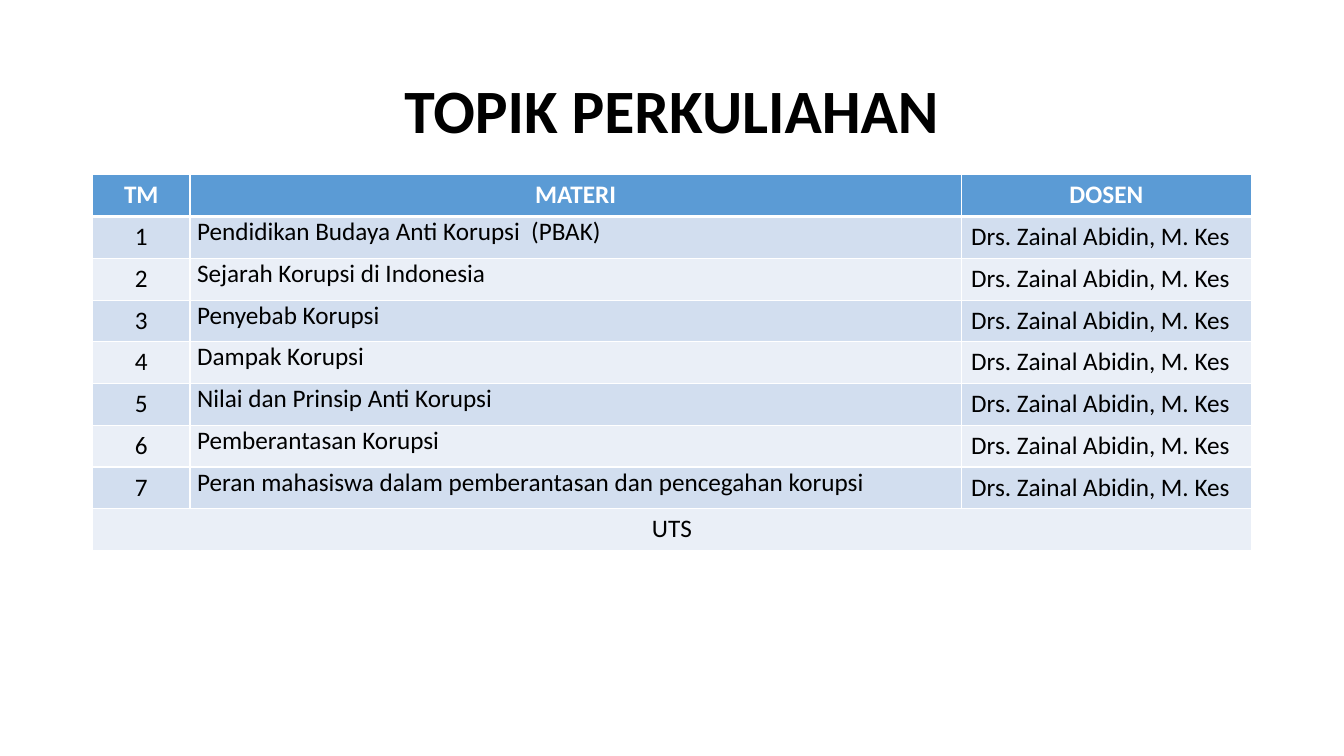
from lxml.etree import SubElement
from pptx import Presentation
from pptx.dml.color import RGBColor
from pptx.enum.text import MSO_ANCHOR, PP_ALIGN
from pptx.oxml.ns import qn
from pptx.util import Pt

WHITE = RGBColor(0xFF, 0xFF, 0xFF)
BLACK = RGBColor(0x00, 0x00, 0x00)
HEADER_BLUE = RGBColor(0x5B, 0x9B, 0xD5)
BAND_DARK = RGBColor(0xD2, 0xDE, 0xEF)
BAND_LIGHT = RGBColor(0xEA, 0xEF, 0xF7)

LEFT, WIDTH = Pt(66), Pt(828)
LECTURER = "Drs. Zainal Abidin, M. Kes"
TOPICS = [
    "Pendidikan Budaya Anti Korupsi  (PBAK)",
    "Sejarah Korupsi di Indonesia",
    "Penyebab Korupsi",
    "Dampak Korupsi",
    "Nilai dan Prinsip Anti Korupsi",
    "Pemberantasan Korupsi",
    "Peran mahasiswa dalam pemberantasan dan pencegahan korupsi",
]


def write_text(frame, text, alignment, size, color, bold):
    paragraph = frame.paragraphs[0]
    paragraph.alignment = alignment
    run = paragraph.add_run()
    run.text = text
    run.font.color.rgb = color
    font_format = {"name": "Calibri", "size": Pt(size), "bold": bold}
    for attribute, value in font_format.items():
        setattr(run.font, attribute, value)
    return paragraph


def add_borders(cell, widths):
    properties = cell._tc.get_or_add_tcPr()
    for side, width in widths.items():
        line = SubElement(properties, qn(f"a:ln{side}"), w=str(Pt(width)))
        fill = SubElement(line, qn("a:solidFill"))
        SubElement(fill, qn("a:srgbClr"), val=str(WHITE))


presentation = Presentation()
presentation.slide_width = Pt(960)
presentation.slide_height = Pt(540)
slide = presentation.slides.add_slide(presentation.slide_layouts[6])

title = slide.shapes.add_textbox(LEFT, Pt(28.75), WIDTH, Pt(104.4))
title_frame = title.text_frame
title_frame.word_wrap = True
title_frame.vertical_anchor = MSO_ANCHOR.MIDDLE
title_paragraph = write_text(
    title_frame, "TOPIK PERKULIAHAN", PP_ALIGN.CENTER, 44, BLACK, True
)
title_paragraph.line_spacing = 0.9

rows = [("TM", "MATERI", "DOSEN")]
rows += [(str(number), topic, LECTURER) for number, topic in enumerate(TOPICS, 1)]
rows.append(("UTS", "", ""))

table = slide.shapes.add_table(
    len(rows), 3, LEFT, Pt(124.9), WIDTH, Pt(29.84 * len(rows))
).table
for column, width in zip(table.columns, (69.8, 550.8, 207.4)):
    column.width = Pt(width)
for row in table.rows:
    row.height = Pt(29.84)
table.cell(len(rows) - 1, 0).merge(table.cell(len(rows) - 1, 2))

for row_index, texts in enumerate(rows):
    is_header = row_index == 0
    band = BAND_DARK if row_index % 2 else BAND_LIGHT
    for column_index, text in enumerate(texts):
        cell = table.cell(row_index, column_index)
        add_borders(cell, {
            "L": 1,
            "R": 1,
            "T": 3 if row_index == 1 else 1,
            "B": 3 if is_header else 1,
        })
        cell.fill.solid()
        cell.fill.fore_color.rgb = HEADER_BLUE if is_header else band
        if not text:
            continue
        centered = is_header or column_index == 0
        write_text(
            cell.text_frame,
            text,
            PP_ALIGN.CENTER if centered else PP_ALIGN.LEFT,
            18,
            WHITE if is_header else BLACK,
            is_header,
        )
        if column_index == 1 and not is_header:
            margins = {"left": 5, "top": 0, "right": 5, "bottom": 0}
            for side, margin in margins.items():
                setattr(cell, f"margin_{side}", Pt(margin))

presentation.save("out.pptx")
